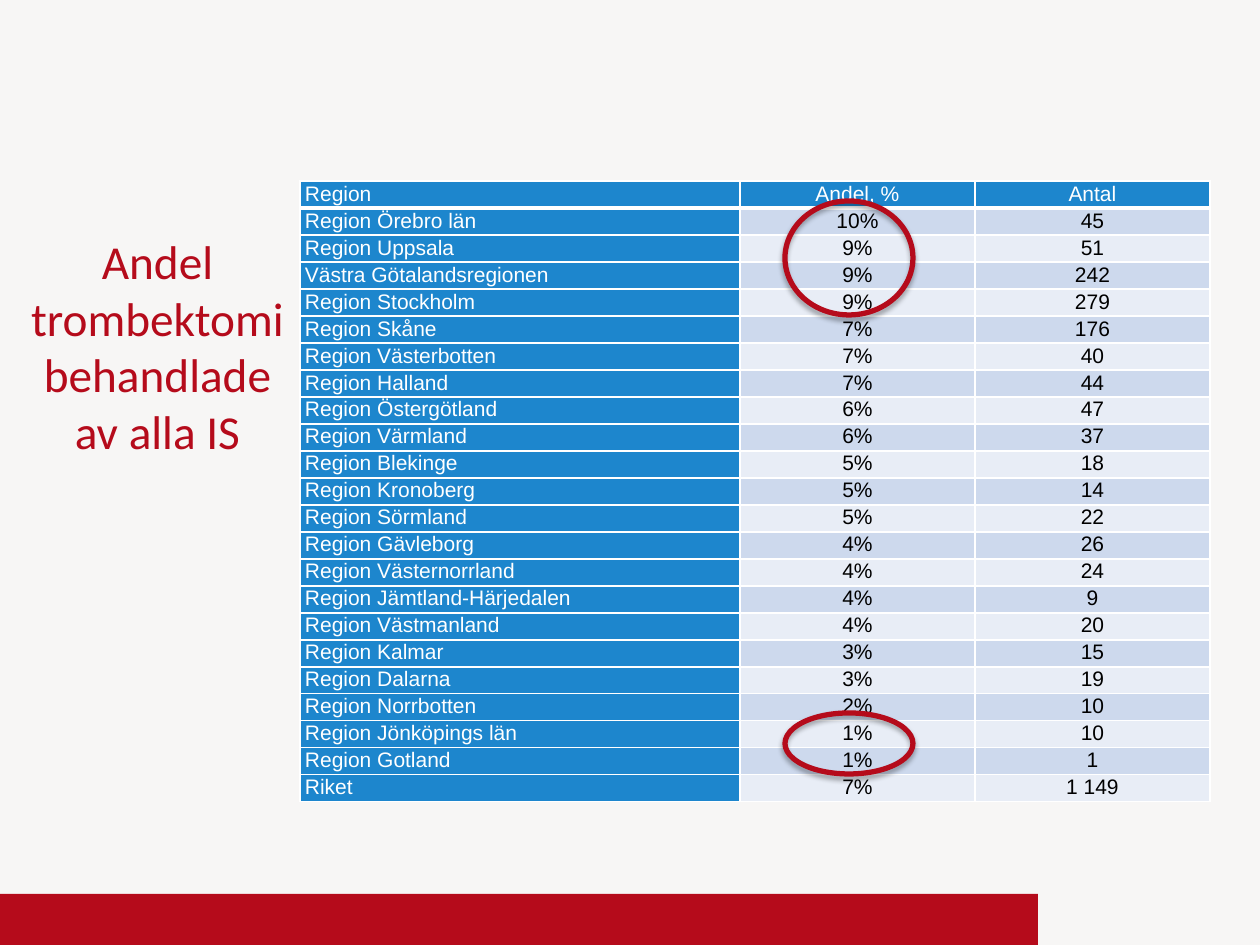
from lxml.etree import SubElement
from pptx import Presentation
from pptx.dml.color import RGBColor
from pptx.enum.shapes import MSO_SHAPE
from pptx.enum.text import MSO_ANCHOR, MSO_AUTO_SIZE, PP_ALIGN
from pptx.oxml import parse_xml
from pptx.oxml.ns import nsdecls, qn
from pptx.util import Emu, Pt

EMU_PER_PX = 914400 / 126
RED, BLUE, WHITE, BLACK = "B50B1B", "1D86CD", "FFFFFF", "000000"
BANDS = ["E8EDF6", "CDD9ED"]

HEADER = ("Region", "Andel, %", "Antal")
REGIONS = [
    ("Region Örebro län", "10%", "45"),
    ("Region Uppsala", "9%", "51"),
    ("Västra Götalandsregionen", "9%", "242"),
    ("Region Stockholm", "9%", "279"),
    ("Region Skåne", "7%", "176"),
    ("Region Västerbotten", "7%", "40"),
    ("Region Halland", "7%", "44"),
    ("Region Östergötland", "6%", "47"),
    ("Region Värmland", "6%", "37"),
    ("Region Blekinge", "5%", "18"),
    ("Region Kronoberg", "5%", "14"),
    ("Region Sörmland", "5%", "22"),
    ("Region Gävleborg", "4%", "26"),
    ("Region Västernorrland", "4%", "24"),
    ("Region Jämtland-Härjedalen", "4%", "9"),
    ("Region Västmanland", "4%", "20"),
    ("Region Kalmar", "3%", "15"),
    ("Region Dalarna", "3%", "19"),
    ("Region Norrbotten", "2%", "10"),
    ("Region Jönköpings län", "1%", "10"),
    ("Region Gotland", "1%", "1"),
    ("Riket", "7%", "1 149"),
]


def px(length):
    return Emu(round(length * EMU_PER_PX))


def color(value):
    return RGBColor.from_string(value)


def paint(fill, value):
    fill.solid()
    fill.fore_color.rgb = color(value)


def format_font(font, name, size, value):
    font.name, font.size, font.bold = name, Pt(size), False
    font.color.rgb = color(value)


def add_title(slide, left, top, width, height):
    title = slide.shapes.title
    title.left, title.top, title.width, title.height = map(px, (left, top, width, height))
    text_frame = title.text_frame
    text_frame.text = "Andel trombektomibehandlade av alla IS"
    text_frame.word_wrap = True
    text_frame.auto_size = MSO_AUTO_SIZE.NONE
    text_frame.vertical_anchor = MSO_ANCHOR.MIDDLE
    paragraph = text_frame.paragraphs[0]
    paragraph.alignment = PP_ALIGN.CENTER
    format_font(paragraph.runs[0].font, "Calibri", 27, RED)


def add_footer_bar(slide, left, top, width, height):
    bar = slide.shapes.add_shape(MSO_SHAPE.RECTANGLE, *map(px, (left, top, width, height)))
    bar.shadow.inherit = False
    paint(bar.fill, RED)
    bar.line.fill.background()


def set_borders(cell, bottom_width):
    """Draw white cell borders; they must stand before the fill."""
    properties = cell._tc.get_or_add_tcPr()
    widths = {"lnL": 1, "lnR": 1, "lnT": 1, "lnB": bottom_width}
    for index, (side, width) in enumerate(widths.items()):
        line = parse_xml(
            f'<a:{side} {nsdecls("a")} w="{Pt(width)}"><a:solidFill>'
            f'<a:srgbClr val="{WHITE}"/></a:solidFill></a:{side}>')
        properties.insert(index, line)


def format_cell(cell, text, row, column):
    is_label = row == 0 or column == 0
    cell.margin_left = cell.margin_right = px(5)
    cell.margin_top = cell.margin_bottom = 0
    cell.vertical_anchor = MSO_ANCHOR.MIDDLE
    paint(cell.fill, BLUE if is_label else BANDS[row % 2])
    set_borders(cell, 3 if row == 0 else 1)

    paragraph = cell.text_frame.paragraphs[0]
    paragraph.text = text
    paragraph.alignment = PP_ALIGN.CENTER if column else PP_ALIGN.LEFT
    paragraph.line_spacing = 0.94
    paragraph.space_after = Pt(14)
    indents = paragraph._p.get_or_add_pPr()
    indents.set("marL", str(px(1)))
    indents.set("indent", str(-px(1)))
    format_font(paragraph.runs[0].font, "Arial", 12, WHITE if is_label else BLACK)


def add_region_table(slide, left, top, width, row_height):
    rows = [HEADER, *REGIONS]
    value_width = 235
    frame = slide.shapes.add_table(
        len(rows), len(HEADER), *map(px, (left, top, width, row_height * len(rows))))
    table = frame.table
    for column, column_width in enumerate((width - 2 * value_width, value_width, value_width)):
        table.columns[column].width = px(column_width)
    for row, texts in enumerate(rows):
        table.rows[row].height = px(row_height)
        for column, text in enumerate(texts):
            format_cell(table.cell(row, column), text, row, column)


def add_highlight(slide, left, top, width, height):
    ring = slide.shapes.add_shape(MSO_SHAPE.OVAL, *map(px, (left, top, width, height)))
    ring.fill.background()
    ring.line.color.rgb = color(RED)
    ring.line.width = Pt(3)
    # Soft shadow straight below the ring
    ring.shadow.inherit = False
    effects = ring._element.spPr.find(qn("a:effectLst"))
    shadow = SubElement(effects, qn("a:outerShdw"), blurRad=str(Pt(3.1)),
                        dist=str(Pt(1.8)), dir="5400000", rotWithShape="0")
    shadow_color = SubElement(shadow, qn("a:srgbClr"), val=BLACK)
    SubElement(shadow_color, qn("a:alpha"), val="35000")


def main():
    presentation = Presentation()
    presentation.slide_width, presentation.slide_height = px(1260), px(945)
    slide = presentation.slides.add_slide(presentation.slide_layouts[5])
    paint(slide.background.fill, "F7F6F5")

    add_footer_bar(slide, 0, 894, 1038, 51)
    add_title(slide, 15, 156, 285, 379)
    add_region_table(slide, 300, 181, 910, 27)
    # Highest and lowest shares
    for top, height in ((201, 114), (713, 61)):
        add_highlight(slide, 785, top, 128, height)

    presentation.save("out.pptx")


if __name__ == "__main__":
    main()
